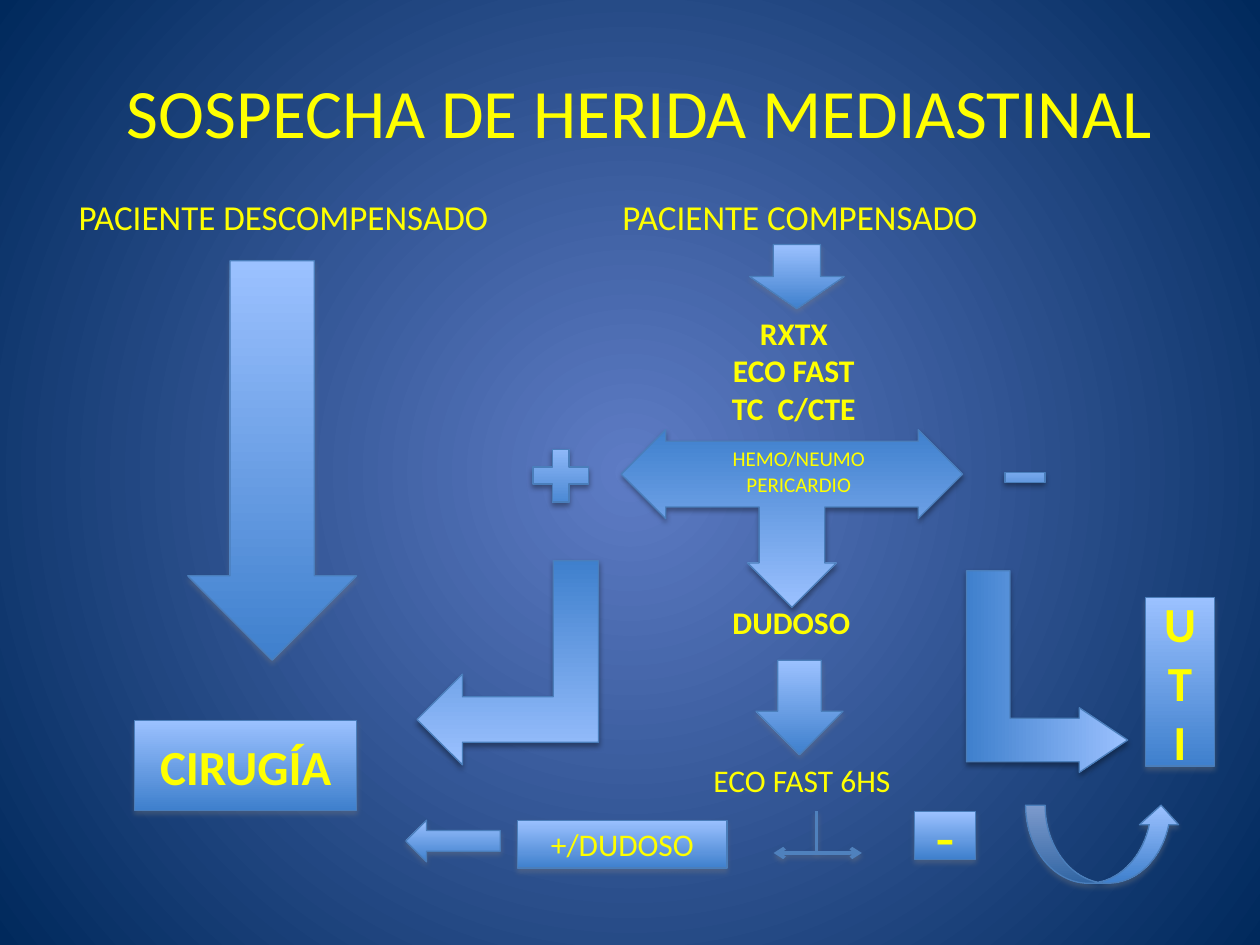
from dataclasses import dataclass

from lxml.etree import SubElement
from pptx import Presentation
from pptx.dml.color import RGBColor
from pptx.enum.shapes import MSO_CONNECTOR as Connector, MSO_SHAPE as Shape
from pptx.enum.text import MSO_ANCHOR as Anchor, MSO_AUTO_SIZE as AutoSize, PP_ALIGN as Align
from pptx.oxml.ns import qn
from pptx.util import Inches, Pt


@dataclass(frozen=True)
class Theme:
    font: str = "Calibri"
    text: str = "FFFF00"
    backdrop: tuple = ("5E7CC5", "00295C")
    fill: tuple = ("9BC1FF", "3F80CD")
    outline: str = "4A7EBB"
    branch: str = "4F81BD"
    soft_shadow: str = "808080"
    deep_shadow: str = "000000"
    title: float = 39.6
    dash: float = 36
    outcome: float = 28
    heading: float = 20
    body: float = 18
    finding: float = 12


THEME = Theme()

ARROWS = [
    (Shape.DOWN_ARROW, (1.49, 2.07, 1.34, 3.17), {}),
    (Shape.DOWN_ARROW, (5.95, 1.94, 0.75, 0.51), {}),
    (Shape.LEFT_RIGHT_UP_ARROW, (4.93, 3.41, 2.71, 1.41),
     dict(turn=180, adjust=(0.37, 0.25, 0.25), shade=THEME.deep_shadow)),
    (Shape.MATH_PLUS, (4.15, 3.49, 0.6, 0.57), dict(shade=THEME.deep_shadow)),
    (Shape.MATH_MINUS, (7.92, 3.63, 0.43, 0.32), dict(shade=THEME.deep_shadow)),
    (Shape.BENT_ARROW, (3.31, 4.45, 1.44, 1.62),
     dict(turn=180, adjust=(0.25, 0.25, 0.25, 0), shade=THEME.deep_shadow)),
    (Shape.BENT_UP_ARROW, (7.51, 4.69, 1.6, 1.28),
     dict(turn=90, adjust=(0.27, 0.2, 0.3), shade=THEME.deep_shadow)),
    (Shape.DOWN_ARROW, (6, 5.24, 0.69, 0.75), {}),
    (Shape.LEFT_ARROW, (3.22, 6.51, 0.75, 0.33), {}),
    (Shape.CURVED_UP_ARROW, (8.14, 6.39, 1.23, 0.62), {}),
]

BRANCHES = [
    ((6.48, 6.44, 6.48, 6.77), ()),
    ((6.84, 6.77, 6.14, 6.77), ("headEnd", "tailEnd")),
]

OUTCOMES = [
    ("CIRUGÍA", (1.07, 5.72, 1.76, 0.71), dict(size=THEME.outcome, bold=True)),
    ("U\nT\nI", (9.09, 4.74, 0.55, 1.34), dict(size=THEME.outcome, bold=True)),
    ("+/DUDOSO", (4.11, 6.51, 1.66, 0.38), dict(size=THEME.body)),
    ("-", (7.26, 6.44, 0.48, 0.38), dict(size=THEME.dash)),
]

TITLE = ("SOSPECHA DE HERIDA MEDIASTINAL ", (0.64, 0.25, 9, 1.25))

LABELS = [
    ("PACIENTE DESCOMPENSADO", (0.22, 1.5, 4.06, 0.44), dict(size=THEME.heading)),
    ("PACIENTE COMPENSADO", (4.15, 1.5, 4.4, 0.44), dict(size=THEME.heading)),
    ("DUDOSO", (5.32, 4.74, 1.92, 0.4), dict(size=THEME.body, bold=True)),
    ("ECO FAST 6HS", (5.13, 5.99, 2.47, 0.4), dict(size=THEME.body)),
    ("RXTX\nECO FAST\nTC  C/CTE", (5.24, 2.44, 2.12, 1.01), dict(size=THEME.body, bold=True)),
    ("HEMO/NEUMO\nPERICARDIO", (5.32, 3.49, 2.04, 0.51), dict(size=THEME.finding)),
]


def color(value):
    return RGBColor.from_string(value)


def paint_gradient(fill, colors):
    fill.gradient()
    for stop, value in zip(fill.gradient_stops, colors):
        stop.color.rgb = color(value)


def paint_backdrop(page):
    paint_gradient(page.background.fill, THEME.backdrop)
    linear = page.element.find(".//" + qn("a:lin"))
    gradient = linear.getparent()
    gradient.remove(linear)
    circle = SubElement(gradient, qn("a:path"), {"path": "circle"})
    SubElement(circle, qn("a:fillToRect"), dict.fromkeys("ltrb", "50000"))


def cast_shadow(effects, shade, distance, opacity):
    shadow = SubElement(effects, qn("a:outerShdw"), blurRad=str(Pt(3.1)),
                        dist=str(Pt(distance)), dir="5400000", rotWithShape="0")
    tint = SubElement(shadow, qn("a:srgbClr"), val=shade)
    SubElement(tint, qn("a:alpha"), val=str(opacity * 1000))


def write(frame, text, size, bold=False, anchor=Anchor.TOP, fit=AutoSize.NONE):
    frame.word_wrap = True
    frame.auto_size = fit
    frame.vertical_anchor = anchor
    for index, words in enumerate(text.split("\n")):
        para = frame.add_paragraph() if index else frame.paragraphs[0]
        para.alignment = Align.CENTER
        span = para.add_run()
        span.text = words
        span.font.name = THEME.font
        span.font.size = Pt(size)
        span.font.bold = bold
        span.font.color.rgb = color(THEME.text)


def add_figure(page, kind, place, turn=0, adjust=(), shade=THEME.soft_shadow):
    figure = page.shapes.add_shape(kind, *map(Inches, place))
    figure.rotation = turn
    for index, value in enumerate(adjust):
        figure.adjustments[index] = value
    paint_gradient(figure.fill, THEME.fill)
    figure.fill.gradient_angle = 270
    figure.line.color.rgb = color(THEME.outline)
    figure.line.width = Pt(0.75)
    figure.shadow.inherit = False
    cast_shadow(figure.element.spPr.find(qn("a:effectLst")), shade, 1.8, 35)
    return figure


def add_branch(page, ends, heads):
    branch = page.shapes.add_connector(Connector.STRAIGHT, *map(Inches, ends))
    branch.line.color.rgb = color(THEME.branch)
    branch.line.width = Pt(2)
    properties = branch.element.spPr
    for head in heads:
        SubElement(properties.find(qn("a:ln")), qn("a:" + head), type="arrow")
    cast_shadow(SubElement(properties, qn("a:effectLst")), THEME.soft_shadow, 1.6, 38)


def add_label(page, text, place, **style):
    box = page.shapes.add_textbox(*map(Inches, place))
    write(box.text_frame, text, **style)


def main():
    """Build the triage flowchart for suspected mediastinal wounds."""
    deck = Presentation()
    deck.slide_width, deck.slide_height = Inches(10), Inches(7.5)
    page = deck.slides.add_slide(deck.slide_layouts[6])
    paint_backdrop(page)
    add_label(page, *TITLE, size=THEME.title, anchor=Anchor.MIDDLE)
    for kind, place, style in ARROWS:
        add_figure(page, kind, place, **style)
    for ends, heads in BRANCHES:
        add_branch(page, ends, heads)
    for text, place, style in OUTCOMES:
        box = add_figure(page, Shape.FLOWCHART_PROCESS, place)
        write(box.text_frame, text, anchor=Anchor.MIDDLE, **style)
    for text, place, style in LABELS:
        add_label(page, text, place, fit=AutoSize.SHAPE_TO_FIT_TEXT, **style)
    deck.save("out.pptx")


if __name__ == "__main__":
    main()
